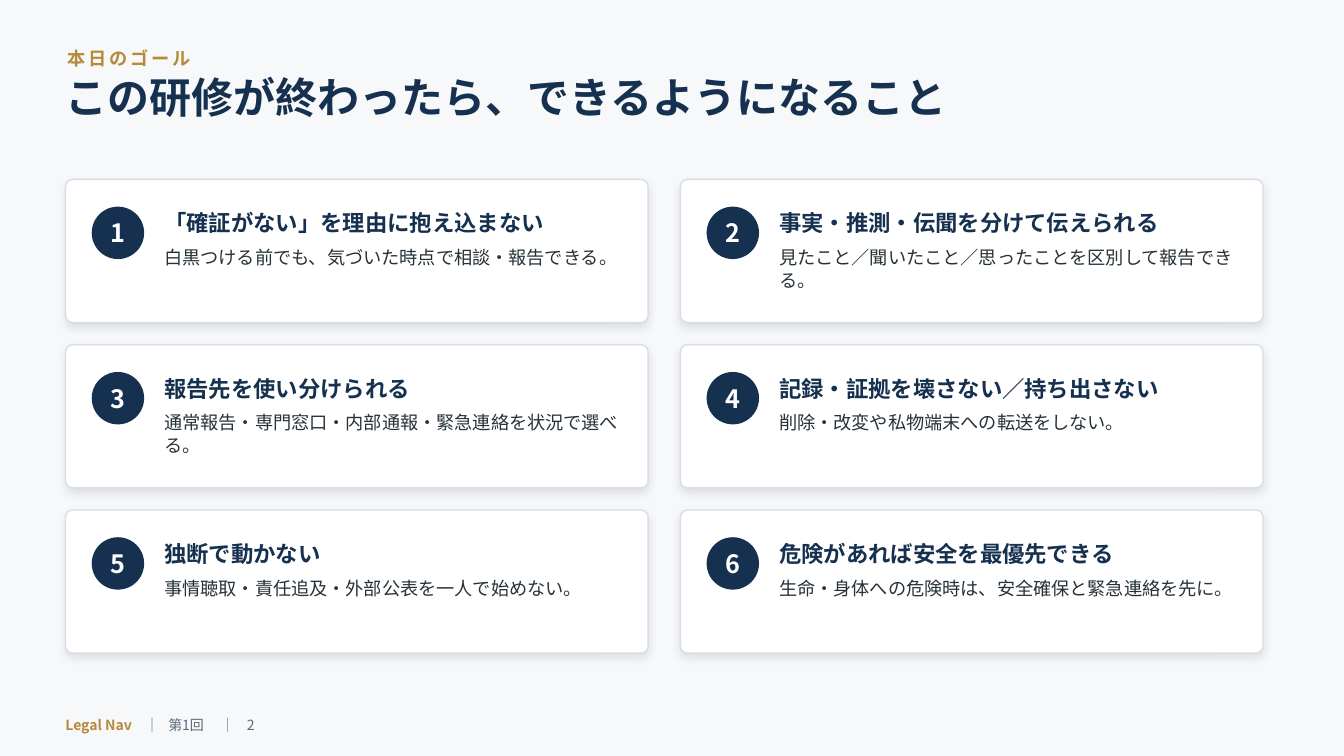
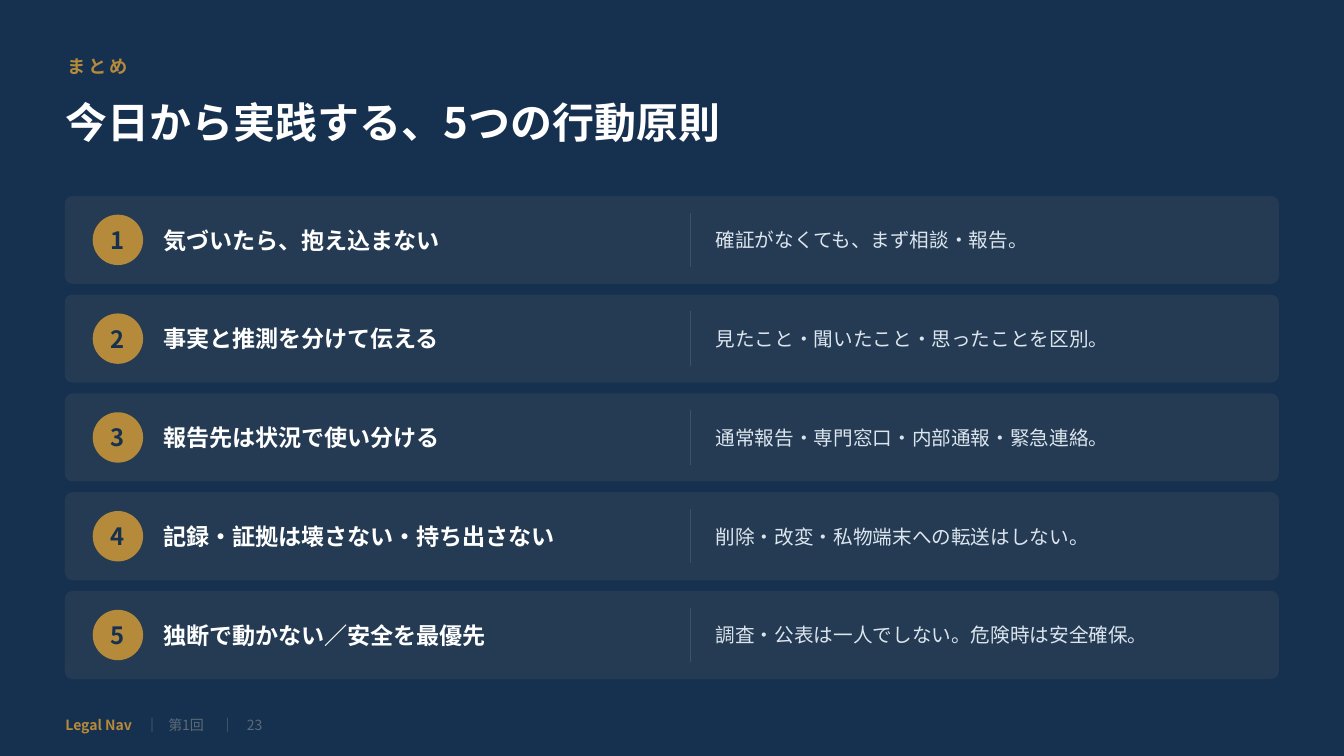
import pptx
import pptx.dml.color
import pptx.enum.shapes
import pptx.enum.text
import pptx.oxml
import pptx.oxml.ns
import pptx.util
from lxml import etree

RGBColor = pptx.dml.color.RGBColor
Align = pptx.enum.text.PP_ALIGN
Anchor = pptx.enum.text.MSO_ANCHOR
Preset = pptx.enum.shapes.MSO_SHAPE
qn = pptx.oxml.ns.qn

# Colours and type
NAVY = RGBColor(0x16, 0x31, 0x4F)
GOLD = RGBColor(0xB5, 0x8A, 0x3A)
WHITE = RGBColor(0xFF, 0xFF, 0xFF)
PAPER = RGBColor(0xF6, 0xF8, 0xFA)
INK = RGBColor(0x26, 0x32, 0x38)
MUTED = RGBColor(0x5B, 0x6B, 0x78)
CARD_EDGE = RGBColor(0xD7, 0xDE, 0xE5)
BAND = RGBColor(0x24, 0x3B, 0x53)
BAND_RULE = RGBColor(0x3A, 0x53, 0x6B)
PALE = RGBColor(0xDC, 0xE5, 0xEE)
FONT = "Noto Sans CJK JP"

# Grid: every column and row is a tenth of an inch
UNIT = pptx.util.Inches(0.1)
COLUMNS, ROWS = 133.33, 75
MARGIN = 6.5
CONTENT_WIDTH = 120.3
CORNER = 0.7

GOALS = [
    ("「確証がない」を理由に抱え込まない", "白黒つける前でも、気づいた時点で相談・報告できる。"),
    ("事実・推測・伝聞を分けて伝えられる", "見たこと／聞いたこと／思ったことを区別して報告できる。"),
    ("報告先を使い分けられる", "通常報告・専門窓口・内部通報・緊急連絡を状況で選べる。"),
    ("記録・証拠を壊さない／持ち出さない", "削除・改変や私物端末への転送をしない。"),
    ("独断で動かない", "事情聴取・責任追及・外部公表を一人で始めない。"),
    ("危険があれば安全を最優先できる", "生命・身体への危険時は、安全確保と緊急連絡を先に。"),
]
PRINCIPLES = [
    ("気づいたら、抱え込まない", "確証がなくても、まず相談・報告。"),
    ("事実と推測を分けて伝える", "見たこと・聞いたこと・思ったことを区別。"),
    ("報告先は状況で使い分ける", "通常報告・専門窓口・内部通報・緊急連絡。"),
    ("記録・証拠は壊さない・持ち出さない", "削除・改変・私物端末への転送はしない。"),
    ("独断で動かない／安全を最優先", "調査・公表は一人でしない。危険時は安全確保。"),
]


def grid(*lengths):
    """Turn columns and rows into slide lengths."""
    return [round(length * UNIT) for length in lengths]


def write(para, text, size, color, bold=False, spacing=0):
    """Add one formatted span of text to a paragraph."""
    span = para.add_run()
    span.text = text
    span.font.size = pptx.util.Pt(size)
    span.font.bold = bold
    span.font.color.rgb = color
    span.font.name = FONT
    properties = span.font._element
    etree.SubElement(properties, qn("a:ea")).set("typeface", FONT)
    if spacing:
        properties.set("spc", str(spacing * 100))


class Builder:
    """Holds the deck style and the page being drawn."""

    def __init__(self):
        self.deck = pptx.Presentation()
        self.deck.slide_width, self.deck.slide_height = grid(COLUMNS, ROWS)
        self.page = None

    def new_page(self, background):
        self.page = self.deck.slides.add_slide(self.deck.slide_layouts[6])
        self.page.background.fill.solid()
        self.page.background.fill.fore_color.rgb = background

    def frame(self, box, anchor, align=Align.LEFT, wrap=True):
        """Clear the insets of a box and return its first paragraph."""
        frame = box.text_frame
        frame.margin_left = frame.margin_right = 0
        frame.margin_top = frame.margin_bottom = 0
        frame.word_wrap = wrap
        frame.vertical_anchor = anchor
        para = frame.paragraphs[0]
        para.alignment = align
        return para

    def text(self, place, text, leading=None, anchor=Anchor.MIDDLE, **style):
        box = self.page.shapes.add_textbox(*grid(*place))
        para = self.frame(box, anchor)
        if leading:
            para.line_spacing = pptx.util.Pt(leading)
        write(para, text, **style)

    def shape(self, preset, place, fill, edge=None):
        shape = self.page.shapes.add_shape(preset, *grid(*place))
        shape.shadow.inherit = False
        shape.fill.solid()
        shape.fill.fore_color.rgb = fill
        if edge is None:
            shape.line.fill.background()
        else:
            shape.line.color.rgb = edge
            shape.line.width = pptx.util.Pt(1)
        return shape

    def panel(self, place, fill, edge, shadow=False):
        """Draw a rounded panel, with a soft shadow if asked."""
        panel = self.shape(Preset.ROUNDED_RECTANGLE, place, fill, edge)
        panel.adjustments[0] = CORNER / place[3]
        if shadow:
            effects = panel._element.spPr.find(qn("a:effectLst"))
            outer = etree.SubElement(
                effects, qn("a:outerShdw"), blurRad=str(pptx.util.Pt(7)),
                dist=str(pptx.util.Pt(3)), dir="5400000", algn="ctr", rotWithShape="0")
            black = etree.SubElement(outer, qn("a:srgbClr"), val="000000")
            etree.SubElement(black, qn("a:alpha"), val="10000")

    def badge(self, left, top, side, number, fill, **style):
        badge = self.shape(Preset.OVAL, (left, top, side, side), fill)
        para = self.frame(badge, Anchor.MIDDLE, Align.CENTER, wrap=False)
        write(para, str(number), bold=True, **style)

    def divider(self, column, top, bottom):
        line = self.page.shapes.add_connector(
            pptx.enum.shapes.MSO_CONNECTOR.STRAIGHT, *grid(column, top, column, bottom))
        line.line.color.rgb = BAND_RULE
        line.line.width = pptx.util.Pt(1)
        etree.SubElement(line._element.spPr, qn("a:effectLst"))

    def heading(self, label, label_top, title, title_top, title_height, color, **layout):
        self.text((6.7, label_top, 115, 3.2), label,
                  size=13, color=GOLD, bold=True, spacing=2)
        self.text((MARGIN, title_top, 120, title_height), title,
                  size=30, color=color, bold=True, **layout)

    def footer(self, number):
        box = self.page.shapes.add_textbox(*grid(MARGIN, 70.4, CONTENT_WIDTH, 3))
        para = self.frame(box, Anchor.MIDDLE)
        stops = etree.SubElement(para._p.get_or_add_pPr(), qn("a:tabLst"))
        for position in grid(7.9, 10.2, 15.4, 18):
            etree.SubElement(stops, qn("a:tab"), pos=str(position), algn="l")
        write(para, "Legal Nav", size=10, color=GOLD, bold=True)
        write(para, f"\t｜\t第1回\t｜\t{number}", size=10, color=MUTED)

    def goal_card(self, left, top, width, height, number, title, detail):
        self.panel((left, top, width, height), WHITE, CARD_EDGE, shadow=True)
        self.badge(left + 2.6, top + 2.7, 5.2, number, NAVY, size=18, color=WHITE)
        text_left, text_width = left + 9.8, width - 12
        self.text((text_left, top + 1.8, text_width, 5), title,
                  size=16, color=NAVY, bold=True)
        self.text((text_left, top + 6.6, text_width, 6.2), detail,
                  leading=16, anchor=Anchor.TOP, size=13, color=INK)

    def principle_band(self, top, height, number, title, detail):
        self.panel((MARGIN, top, CONTENT_WIDTH, height), BAND, BAND)
        self.badge(9.2, top + 1.8, 5, number, GOLD, size=17, color=NAVY)
        self.text((16.2, top, 51, height), title, size=16.5, color=WHITE, bold=True)
        self.divider(68.5, top + 1.6, top + height - 1.6)
        self.text((71, top, 54, height), detail, leading=17, size=14, color=PALE)


def main():
    builder = Builder()

    # Goals: two columns of cards
    builder.new_page(PAPER)
    builder.heading("本日のゴール", 4.2, "この研修が終わったら、できるようになること",
                    7.4, 9.5, NAVY, leading=34, anchor=Anchor.TOP)
    width, height, column_gap, row_gap = 57.8, 14.2, 3.2, 2.2
    for index, (title, detail) in enumerate(GOALS):
        row, column = divmod(index, 2)
        builder.goal_card(MARGIN + column * (width + column_gap),
                          17.8 + row * (height + row_gap),
                          width, height, index + 1, title, detail)
    builder.footer(2)

    # Summary: a stack of bands
    builder.new_page(NAVY)
    builder.heading("まとめ", 5, "今日から実践する、5つの行動原則", 8.6, 7, WHITE)
    height, gap = 8.6, 1.2
    for index, (title, detail) in enumerate(PRINCIPLES):
        builder.principle_band(19.5 + index * (height + gap), height,
                               index + 1, title, detail)
    builder.footer(23)

    builder.deck.save("out.pptx")


if __name__ == "__main__":
    main()
